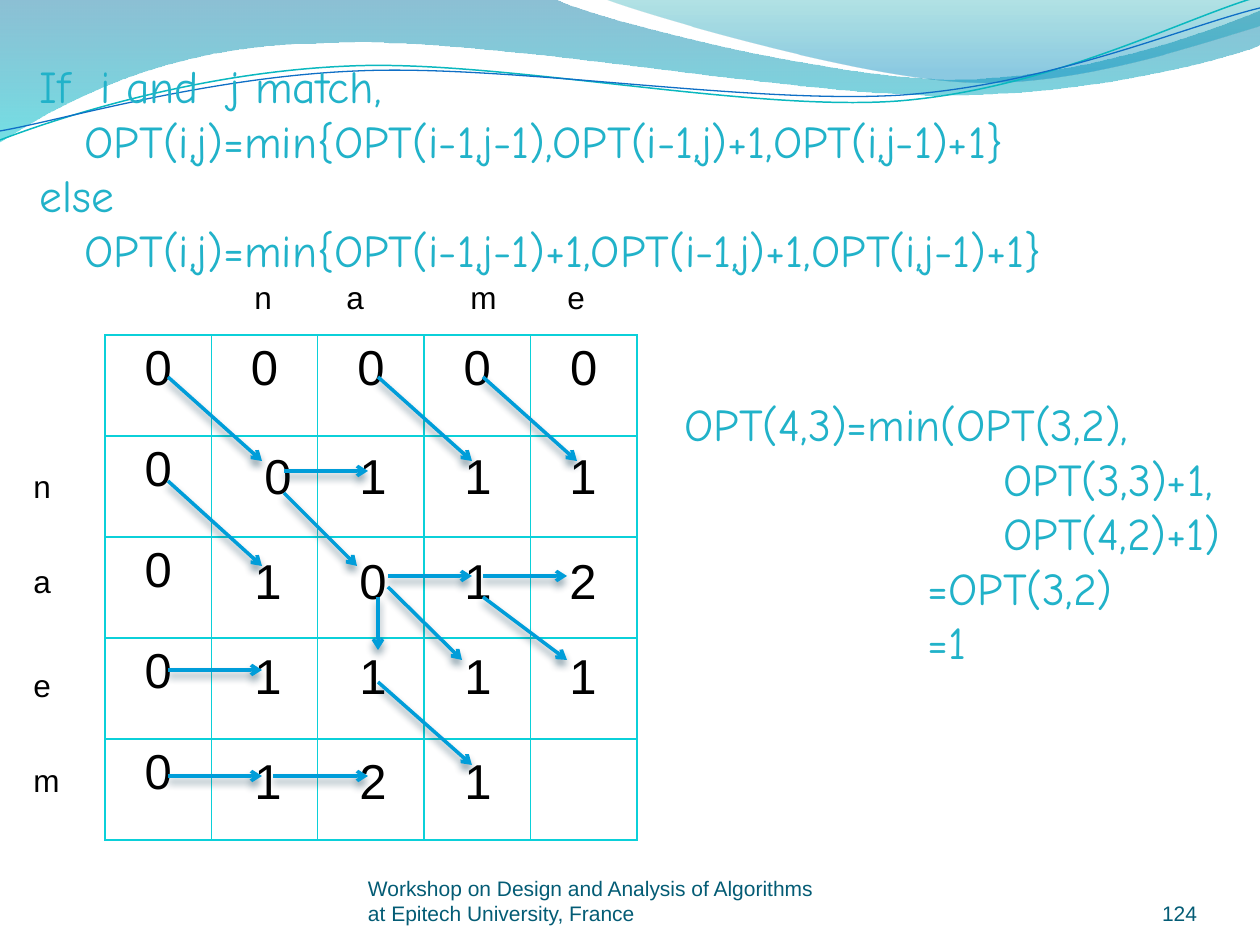
from lxml.etree import SubElement
from pptx import Presentation
from pptx.dml.color import RGBColor
from pptx.enum.shapes import MSO_CONNECTOR
from pptx.enum.text import MSO_ANCHOR, MSO_AUTO_SIZE, PP_ALIGN
from pptx.oxml import parse_xml
from pptx.oxml.ns import nsdecls, qn
from pptx.util import Emu, Pt

BLACK, FORMULA, FOOTER = "000000", "21B2C9", "045C75"


def px(length):
    return Emu(round(length * 914400 / 126))


def color(code):
    return RGBColor.from_string(code)


class SlideBuilder:
    body_font = "Arial"
    formula_font = "Comic Neue"
    arrow_color = "009DD9"
    grid_color = "0BD0D9"

    def __init__(self, slide):
        self.slide = slide
        self.shapes = slide.shapes

    def style(self, paragraph, size, code, font=None, align=PP_ALIGN.LEFT):
        paragraph.alignment = align
        paragraph.font.name = font or self.body_font
        paragraph.font.size = Pt(size)
        paragraph.font.color.rgb = color(code)

    def formula(self, frame, lines):
        frame.word_wrap = True
        frame.auto_size = MSO_AUTO_SIZE.NONE
        frame.vertical_anchor = MSO_ANCHOR.TOP
        for index, (indent, line) in enumerate(lines):
            paragraph = frame.add_paragraph() if index else frame.paragraphs[0]
            paragraph.text = line
            paragraph._p.get_or_add_pPr().set("marL", str(px(indent)))
            self.style(paragraph, 26, FORMULA, self.formula_font)

    def title(self, box, lines):
        title = self.shapes.title
        title.left, title.top, title.width, title.height = map(px, box)
        self.formula(title.text_frame, lines)
        self.shapes._spTree.append(title._element)

    def formula_box(self, box, lines):
        self.formula(self.shapes.add_textbox(*map(px, box)).text_frame, lines)

    def label(self, box, words, size=18):
        frame = self.shapes.add_textbox(*map(px, box)).text_frame
        frame.word_wrap = True
        frame.text = words
        self.style(frame.paragraphs[0], size, BLACK)

    def footer(self, box, words, align=PP_ALIGN.LEFT):
        frame = self.shapes.add_textbox(*map(px, box)).text_frame
        frame.word_wrap = True
        frame.vertical_anchor = MSO_ANCHOR.BOTTOM
        frame.margin_left = frame.margin_right = frame.margin_top = frame.margin_bottom = 0
        frame.text = words
        self.style(frame.paragraphs[0], 12, FOOTER, align=align)

    def outline(self, start, segments, close):
        corners = [(px(x), px(y)) for segment in segments for x, y in segment]
        builder = self.shapes.build_freeform(*map(px, start), scale=1.0)
        builder.add_line_segments(corners, close=close)
        shape = builder.convert_to_shape()
        shape.shadow.inherit = False
        sides = iter(list(shape._element.iter(qn("a:lnTo"))))
        for segment in segments:
            pieces = [next(sides) for _ in segment]
            if len(pieces) == 3:
                self.bend(pieces)
        return shape

    def bend(self, pieces):
        outline = pieces[0].getparent()
        curve = SubElement(outline, qn("a:cubicBezTo"))
        outline.replace(pieces[0], curve)
        for piece in pieces:
            curve.append(piece[0])
        for piece in pieces[1:]:
            outline.remove(piece)

    def wave(self, start, segments, stops):
        shape = self.outline(start, segments, True)
        shape.line.fill.background()
        shape.fill.gradient()
        shape.fill.gradient_angle = 270
        for stop, (position, code, _) in zip(shape.fill.gradient_stops, stops):
            stop.position = position
            stop.color.rgb = color(code)
        for tint, (_, _, opacity) in zip(shape._element.iter(qn("a:srgbClr")), stops):
            SubElement(tint, qn("a:alpha"), val=str(opacity * 1000))

    def ripple(self, start, segments, code, width):
        shape = self.outline(start, segments, False)
        shape.fill.background()
        shape.line.color.rgb = color(code)
        shape.line.width = Pt(width)

    def arrow(self, x1, y1, x2, y2):
        arrow = self.shapes.add_connector(MSO_CONNECTOR.STRAIGHT, *map(px, (x1, y1, x2, y2)))
        arrow.line.color.rgb = color(self.arrow_color)
        arrow.line.width = Pt(2)
        SubElement(arrow.line._get_or_add_ln(), qn("a:tailEnd"), type="arrow")
        effects = SubElement(arrow._element.spPr, qn("a:effectLst"))
        shadow = SubElement(effects, qn("a:outerShdw"), blurRad=str(Pt(4.5)), dist=str(Pt(3)),
                            dir="5400000", algn="ctr", rotWithShape="0")
        tint = SubElement(shadow, qn("a:srgbClr"), val="003148")
        SubElement(tint, qn("a:alpha"), val="48000")

    def grid(self, box, size):
        table = self.shapes.add_table(size, size, *map(px, box)).table
        table.first_row = table.horz_banding = False
        for column in table.columns:
            column.width = px(box[2] / size)
        for row in table.rows:
            row.height = px(box[3] / size)
        for row in range(size):
            for column in range(size):
                cell = table.cell(row, column)
                cell.fill.background()
                self.border(cell)
                if row == 0 or column == 0:
                    cell.text = "0"
                    self.style(cell.text_frame.paragraphs[0], 28, BLACK, align=PP_ALIGN.CENTER)

    def border(self, cell):
        properties = cell._tc.get_or_add_tcPr()
        for index, side in enumerate("LRTB"):
            properties.insert(index, parse_xml(
                f'<a:ln{side} {nsdecls("a")} w="12700"><a:solidFill>'
                f'<a:srgbClr val="{self.grid_color}"/></a:solidFill></a:ln{side}>'))


def main():
    deck = Presentation()
    deck.slide_width, deck.slide_height = px(1260), px(945)
    page = SlideBuilder(deck.slides.add_slide(deck.slide_layouts[5]))

    page.wave((0, -1), [
        [(554, -1)],
        [(600, 21), (837, 79), (955, 79)],
        [(1074, 79), (1207, 33), (1260, 11)],
        [(1261, 45)],
        [(1239, 55), (1096, 96), (940, 95)],
        [(784, 95), (481, 35), (324, 43)],
        [(163, 44), (58, 105), (-1, 142)],
    ], [(0, "0074A1", 45), (1, "00C6CF", 55)])
    page.wave((604, -1), [
        [(641, 14), (859, 78), (969, 82)],
        [(1079, 87), (1211, 40), (1260, 26)],
        [(1260, 0)],
    ], [(0, "00A1A9", 30), (0.8, "008BBF", 45)])
    page.ripple((0, 140), [
        [(60, 117), (199, 72), (349, 66)],
        [(498, 59), (747, 112), (898, 101)],
        [(1049, 89), (1182, 19), (1257, -3)],
    ], "0AB8BF", 0.85)
    page.ripple((0, 131), [
        [(59, 121), (207, 77), (357, 71)],
        [(508, 64), (752, 105), (903, 95)],
        [(1053, 84), (1186, 26), (1260, 8)],
    ], "0F6FC6", 0.75)

    page.grid((105, 335, 532, 505), 5)
    for letter, left in zip("name", (242, 334, 458, 555)):
        page.label((left, 272, 53, 50), letter)
    for letter, top in zip("naem", (461, 556, 660, 755)):
        page.label((21, top, 53, 50), letter)

    distances = (("0111", 439), ("1012", 544), ("1111", 639), ("121", 744))
    for row, (values, top) in enumerate(distances):
        for column, value in enumerate(values):
            nudge = 10 if row == column == 0 else 0
            page.label((242 + 105 * column + nudge, top, 63, 72), value, 28)

    for ends in ((284, 493, 357, 566), (388, 576, 472, 576), (483, 576, 567, 576),
                 (168, 670, 262, 670), (378, 597, 378, 650), (388, 587, 462, 660),
                 (483, 597, 567, 660), (168, 776, 262, 776), (273, 776, 368, 776),
                 (378, 682, 472, 765), (168, 377, 262, 461), (284, 471, 368, 471),
                 (378, 377, 472, 461), (483, 377, 577, 461), (168, 481, 262, 566)):
        page.arrow(*ends)

    page.formula_box((672, 390, 567, 344), [
        (0, "OPT(4,3)=min(OPT(3,2),"),
        (319, "OPT(3,3)+1,"),
        (319, "OPT(4,2)+1)"),
        (243, "=OPT(3,2)"),
        (243, "=1"),
    ])
    page.footer((368, 876, 462, 50),
                "Workshop on Design and Analysis of Algorithms at Epitech University, France")
    page.footer((1092, 876, 105, 50), "124", PP_ALIGN.RIGHT)
    page.title((27, 52, 1229, 233), [
        (0, "If  i and  j match,"),
        (45, "OPT(i,j)=min{OPT(i-1,j-1),OPT(i-1,j)+1,OPT(i,j-1)+1}"),
        (0, "else"),
        (45, "OPT(i,j)=min{OPT(i-1,j-1)+1,OPT(i-1,j)+1,OPT(i,j-1)+1}"),
    ])
    deck.save("out.pptx")


if __name__ == "__main__":
    main()
